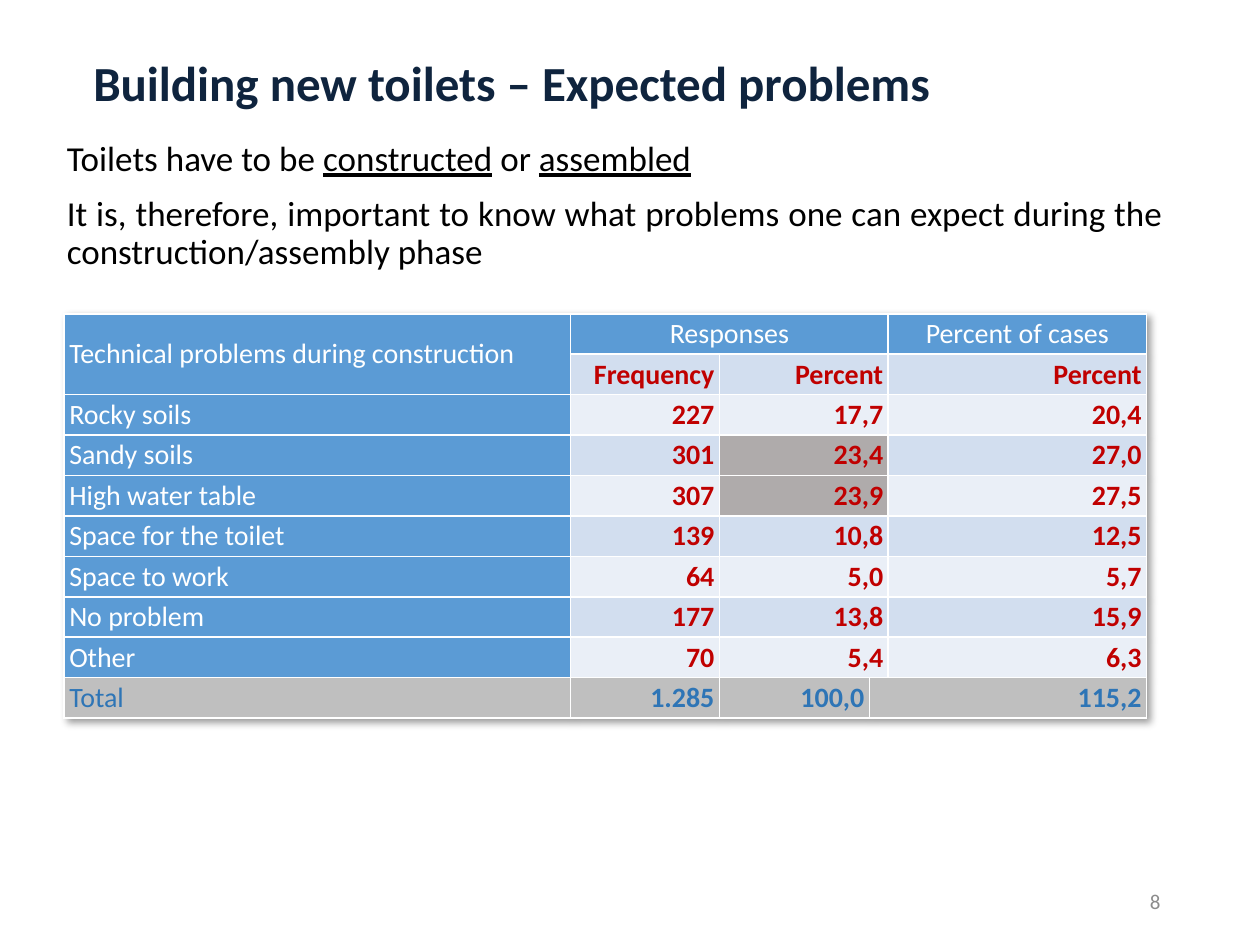
from dataclasses import dataclass

from pptx import Presentation
from pptx.dml.color import RGBColor
from pptx.enum.text import MSO_ANCHOR, MSO_AUTO_SIZE, PP_ALIGN
from pptx.oxml import parse_xml
from pptx.oxml.ns import nsdecls
from pptx.util import Inches, Pt

LEFT, CENTER, RIGHT, JUSTIFY = PP_ALIGN.LEFT, PP_ALIGN.CENTER, PP_ALIGN.RIGHT, PP_ALIGN.JUSTIFY
MIDDLE, TOP = MSO_ANCHOR.MIDDLE, MSO_ANCHOR.TOP
NO_FIT = MSO_AUTO_SIZE.NONE

PAGE_COLUMNS, PAGE_ROWS = 100, 75
PAGE_WIDTH, PAGE_HEIGHT = Inches(10), Inches(7.5)


@dataclass(frozen=True)
class Theme:
    font: str = "Calibri"
    title: str = "0F243E"
    text: str = "000000"
    muted: str = "8C8C8C"
    white: str = "FFFFFF"
    figure: str = "C00000"
    total: str = "2E75B6"
    header_fill: str = "5B9BD5"
    dark_band: str = "D2DEEF"
    light_band: str = "EAEFF7"
    highlight_fill: str = "AFABAB"
    total_fill: str = "BFBFBF"
    title_size: int = 28
    body_size: int = 20
    table_size: int = 16
    number_size: int = 12


@dataclass(frozen=True)
class Area:
    left: float
    top: float
    width: float
    height: float

    def lengths(self) -> dict:
        return {
            "left": across(self.left),
            "top": down(self.top),
            "width": across(self.width),
            "height": down(self.height),
        }


@dataclass(frozen=True)
class Entry:
    text: str
    row: int
    column: int
    fill: str
    color: str
    align: int = RIGHT
    bold: bool = True
    row_span: int = 1
    column_span: int = 1


@dataclass(frozen=True)
class Problem:
    name: str
    frequency: str
    percent: str
    cases: str
    highlighted: bool = False


THEME = Theme()
TITLE_AREA = Area(6.4, 1.3, 87.9, 11)
BODY_AREA = Area(4.3, 10.7, 89, 56.3)
NUMBER_AREA = Area(70.6, 69.5, 22.5, 4)
TABLE_AREA = Area(5.1, 24.9, 85.9, 32.1)
COLUMN_WIDTHS = (40.2, 11.8, 11.9, 1.5, 20.5)
PROBLEMS = (
    Problem("Rocky soils", "227", "17,7", "20,4"),
    Problem("Sandy soils", "301", "23,4", "27,0", True),
    Problem("High water table", "307", "23,9", "27,5", True),
    Problem("Space for the toilet", "139", "10,8", "12,5"),
    Problem("Space to work", "64", "5,0", "5,7"),
    Problem("No problem", "177", "13,8", "15,9"),
    Problem("Other", "70", "5,4", "6,3"),
)
FIRST_PROBLEM_ROW = 2
TOTAL_ROW = FIRST_PROBLEM_ROW + len(PROBLEMS)


def across(columns: float) -> int:
    return round(PAGE_WIDTH * columns / PAGE_COLUMNS)


def down(rows: float) -> int:
    return round(PAGE_HEIGHT * rows / PAGE_ROWS)


def apply(target, values: dict) -> None:
    for name, value in values.items():
        setattr(target, name, value)


def add_span(para, text: str, size: int, color: str, bold=False, underline=False) -> None:
    span = para.add_run()
    span.text = text
    apply(span.font, {"name": THEME.font, "size": Pt(size), "bold": bold, "underline": underline})
    span.font.color.rgb = RGBColor.from_string(color)


def place(box, area: Area, anchor) -> None:
    apply(box, area.lengths())
    apply(box.text_frame, {"word_wrap": True, "auto_size": NO_FIT, "vertical_anchor": anchor})


def fill_title(box) -> None:
    place(box, TITLE_AREA, MIDDLE)
    para = box.text_frame.paragraphs[0]
    apply(para, {"alignment": LEFT, "line_spacing": 0.9})
    add_span(para, "Building new toilets – Expected problems", THEME.title_size, THEME.title, bold=True)


def fill_body(box) -> None:
    place(box, BODY_AREA, TOP)
    paragraphs = (
        (("Toilets have to be ", False), ("constructed", True), (" or ", False), ("assembled", True)),
        (("It is, therefore, important to know what problems one can expect "
          "during the construction/assembly phase", False),),
    )
    frame = box.text_frame
    for index, spans in enumerate(paragraphs):
        para = frame.add_paragraph() if index else frame.paragraphs[0]
        properties = para._p.get_or_add_pPr()
        properties.set("marL", "0")
        properties.set("indent", "0")
        properties.append(parse_xml(f"<a:buNone {nsdecls('a')}/>"))
        space = Pt(10) if index else Pt(0)
        apply(para, {"alignment": JUSTIFY, "line_spacing": 0.9, "space_before": space})
        for text, underline in spans:
            add_span(para, text, THEME.body_size, THEME.text, underline=underline)


def add_page_number(page) -> None:
    box = page.shapes.add_textbox(**NUMBER_AREA.lengths())
    place(box, NUMBER_AREA, MIDDLE)
    para = box.text_frame.paragraphs[0]
    para.alignment = RIGHT
    add_span(para, "8", THEME.number_size, THEME.muted)


def table_entries() -> list[Entry]:
    header = {"fill": THEME.header_fill, "color": THEME.white, "bold": False}
    heading = {"row": 1, "fill": THEME.dark_band, "color": THEME.figure}
    total = {"row": TOTAL_ROW, "fill": THEME.total_fill, "color": THEME.total}
    entries = [
        Entry("Technical problems during construction", 0, 0, align=LEFT, row_span=2, **header),
        Entry("Responses", 0, 1, align=CENTER, column_span=3, **header),
        Entry("Percent of cases", 0, 4, align=CENTER, **header),
        Entry("Frequency", column=1, **heading),
        Entry("Percent", column=2, column_span=2, **heading),
        Entry("Percent", column=4, **heading),
        Entry("Total", column=0, align=LEFT, bold=False, **total),
        Entry("1.285", column=1, **total),
        Entry("100,0", column=2, **total),
        Entry("115,2", column=3, column_span=2, **total),
    ]
    for row, problem in enumerate(PROBLEMS, FIRST_PROBLEM_ROW):
        band = THEME.dark_band if row % 2 else THEME.light_band
        percent_fill = THEME.highlight_fill if problem.highlighted else band
        entries += [
            Entry(problem.name, row, 0, align=LEFT, **header),
            Entry(problem.frequency, row, 1, band, THEME.figure),
            Entry(problem.percent, row, 2, percent_fill, THEME.figure, column_span=2),
            Entry(problem.cases, row, 4, band, THEME.figure),
        ]
    return entries


def paint_cell(cell, fill: str) -> None:
    cell.fill.solid()
    cell.fill.fore_color.rgb = RGBColor.from_string(fill)
    properties = cell._tc.get_or_add_tcPr()
    for index, side in enumerate(("lnL", "lnR", "lnT", "lnB")):
        properties.insert(index, parse_xml(
            f'<a:{side} {nsdecls("a")} w="{Pt(1)}"><a:solidFill>'
            f'<a:srgbClr val="{THEME.white}"/></a:solidFill></a:{side}>'))


def draw_entry(table, entry: Entry) -> None:
    last_row = entry.row + entry.row_span - 1
    last_column = entry.column + entry.column_span - 1
    for row in range(entry.row, last_row + 1):
        for column in range(entry.column, last_column + 1):
            paint_cell(table.cell(row, column), entry.fill)
    cell = table.cell(entry.row, entry.column)
    if entry.row_span * entry.column_span > 1:
        cell.merge(table.cell(last_row, last_column))
    apply(cell, {"margin_left": across(0.4), "margin_right": across(0.4),
                 "margin_top": 0, "margin_bottom": 0, "vertical_anchor": MIDDLE})
    para = cell.text_frame.paragraphs[0]
    para.alignment = entry.align
    add_span(para, entry.text, THEME.table_size, entry.color, entry.bold)


def add_problem_table(page) -> None:
    row_count = TOTAL_ROW + 1
    frame = page.shapes.add_table(row_count, len(COLUMN_WIDTHS), **TABLE_AREA.lengths())
    table = frame.table
    for column, width in zip(table.columns, COLUMN_WIDTHS):
        column.width = across(width)
    for row in table.rows:
        row.height = down(TABLE_AREA.height / row_count)
    for entry in table_entries():
        draw_entry(table, entry)
    frame._element.graphic.graphicData.tbl.tblPr.insert(0, parse_xml(
        f'<a:effectLst {nsdecls("a")}><a:outerShdw blurRad="{Pt(4)}" dist="{Pt(3)}" dir="2700000" '
        'algn="tl" rotWithShape="0"><a:srgbClr val="000000"><a:alpha val="40000"/></a:srgbClr>'
        '</a:outerShdw></a:effectLst>'))


def main() -> None:
    deck = Presentation()
    apply(deck, {"slide_width": PAGE_WIDTH, "slide_height": PAGE_HEIGHT})
    page = deck.slides.add_slide(deck.slide_layouts[1])
    fill_title(page.shapes.title)
    fill_body(page.placeholders[1])
    add_page_number(page)
    add_problem_table(page)
    deck.save("out.pptx")


if __name__ == "__main__":
    main()
